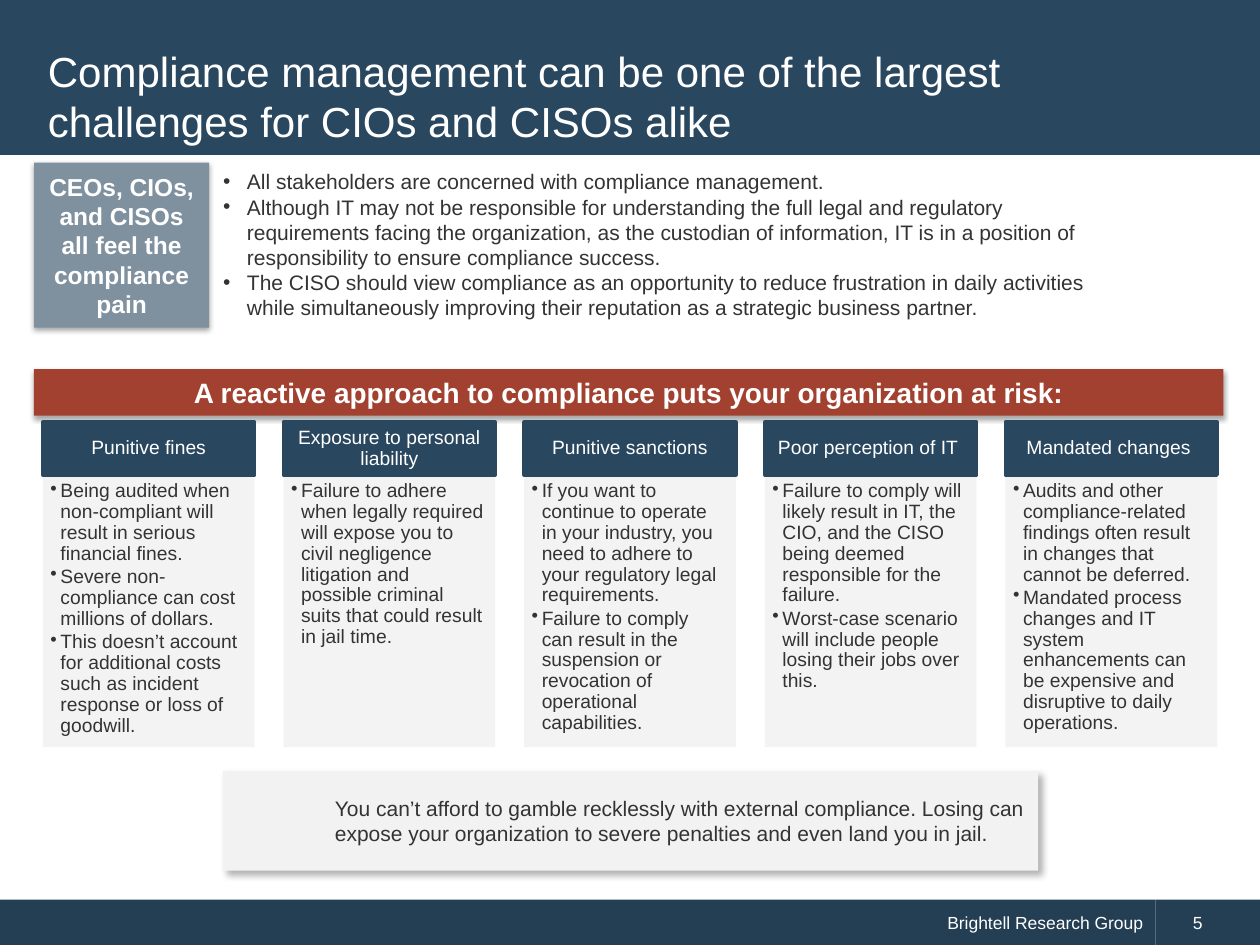
"""Build the compliance risk slide."""
from dataclasses import dataclass

from lxml.etree import SubElement
from pptx import Presentation
from pptx.dml.color import RGBColor
from pptx.enum.shapes import MSO_SHAPE as Shape
from pptx.enum.text import MSO_ANCHOR as Anchor, MSO_AUTO_SIZE as AutoSize, PP_ALIGN as Align
from pptx.oxml.ns import qn
from pptx.util import Inches, Pt

NAVY, DARK, RED, SLATE = "29475F", "243F54", "A24130", "7F919F"
LIGHT, TEXT, WHITE = "F2F2F2", "333333", "FFFFFF"


@dataclass
class Style:
    size: float
    color: str = WHITE
    bold: bool = False
    align: Align = Align.LEFT
    anchor: Anchor = Anchor.MIDDLE
    margin: float = 0
    hanging: float = 0
    spacing: float = 1
    after: float = 0
    insets: tuple = (0.1, 0.05, 0.1, 0.05)


@dataclass
class Column:
    heading: str
    points: list


@dataclass
class Shadow:
    blur: float
    dist: float
    angle: int
    alpha: int


SOFT = Shadow(3, 1.5, 90, 35)
DIAGONAL = Shadow(4, 3, 45, 30)
HEADING = Style(11, align=Align.CENTER, spacing=0.9, insets=(0.09, 0.05, 0.09, 0.05))
POINTS = Style(11, TEXT, anchor=Anchor.TOP, margin=0.08, hanging=0.08,
               spacing=0.9, after=1.6, insets=(0.06, 0.06, 0.09, 0.1))
COLUMNS = [
    Column("Punitive fines", [
        "Being audited when non-compliant will result in serious financial fines.",
        "Severe non-compliance can cost millions of dollars.",
        "This doesn’t account for additional costs such as incident response or loss of goodwill."]),
    Column("Exposure to personal liability", [
        "Failure to adhere when legally required will expose you to civil negligence litigation "
        "and possible criminal suits that could result in jail time."]),
    Column("Punitive sanctions", [
        "If you want to continue to operate in your industry, you need to adhere to your "
        "regulatory legal requirements.",
        "Failure to comply can result in the suspension or revocation of operational capabilities."]),
    Column("Poor perception of IT ", [
        "Failure to comply will likely result in IT, the CIO, and the CISO being deemed "
        "responsible for the failure.",
        "Worst-case scenario will include people losing their jobs over this."]),
    Column("Mandated changes ", [
        "Audits and other compliance-related findings often result in changes that cannot be deferred.",
        "Mandated process changes and IT system enhancements can be expensive and disruptive "
        "to daily operations."]),
]
CONCERNS = [
    "All stakeholders are concerned with compliance management.",
    "Although IT may not be responsible for understanding the full legal and regulatory "
    "requirements facing the organization, as the custodian of information, IT is in a "
    "position of responsibility to ensure compliance success.",
    "The CISO should view compliance as an opportunity to reduce frustration in daily "
    "activities while simultaneously improving their reputation as a strategic business partner.",
]


def rgb(color: str) -> RGBColor:
    return RGBColor.from_string(color)


def write(sp, lines: list, style: Style) -> None:
    tf = sp.text_frame
    tf.text = "\n".join(lines)
    tf.word_wrap = True
    tf.auto_size = AutoSize.NONE
    tf.vertical_anchor = style.anchor
    tf.margin_left, tf.margin_top, tf.margin_right, tf.margin_bottom = map(Inches, style.insets)
    for p in tf.paragraphs:
        p.alignment = style.align
        p.line_spacing = style.spacing
        p.space_before, p.space_after = Pt(0), Pt(style.after)
        pPr = p._p.get_or_add_pPr()
        pPr.set("marL", str(Inches(style.margin)))
        pPr.set("indent", str(-Inches(style.hanging)))
        if style.hanging:
            SubElement(pPr, qn("a:buChar"), char="•")
        for r in p.runs:
            r.font.name, r.font.size, r.font.bold = "Arial", Pt(style.size), style.bold
            r.font.color.rgb = rgb(style.color)


def place(sp, left: float, top: float, width: float, height: float) -> None:
    sp.left, sp.top, sp.width, sp.height = map(Inches, (left, top, width, height))


def add_box(s, at: tuple, fill: str, lines=None, style=None, shadow=None):
    sp = s.shapes.add_shape(Shape.RECTANGLE, *map(Inches, at))
    sp.fill.solid()
    sp.fill.fore_color.rgb = rgb(fill)
    sp.line.fill.background()
    sp.shadow.inherit = False
    if shadow:
        outer = SubElement(sp._element.spPr.find(qn("a:effectLst")), qn("a:outerShdw"),
                           blurRad=str(Pt(shadow.blur)), dist=str(Pt(shadow.dist)),
                           dir=str(shadow.angle * 60000), rotWithShape="0")
        black = SubElement(outer, qn("a:srgbClr"), val="000000")
        SubElement(black, qn("a:alpha"), val=str(shadow.alpha * 1000))
    if lines:
        write(sp, lines, style)
    return sp


def add_column(s, left: float, column: Column) -> None:
    panel = add_box(s, (left, 3.76, 1.68, 2.17), LIGHT, column.points, POINTS)
    color = panel._element.spPr.find(qn("a:solidFill"))[0]
    SubElement(color, qn("a:alpha"), val="90000")
    head = add_box(s, (left, 3.35, 1.68, 0.42), NAVY, [column.heading], HEADING)
    head.line.color.rgb = rgb(NAVY)
    head.line.width = Pt(2)


def main() -> None:
    prs = Presentation()
    prs.slide_width, prs.slide_height = Inches(10), Inches(7.5)
    s = prs.slides.add_slide(prs.slide_layouts[1])

    band = add_box(s, (0, 0, 10, 1.23), NAVY)
    s.shapes._spTree.insert(2, band._element)
    title, body = s.placeholders
    place(title, 0.28, 0.28, 9.43, 0.96)
    write(title, ["Compliance management can be one of the largest challenges "
                  "for CIOs and CISOs alike"], Style(24))
    place(body, 1.67, 1.29, 7.09, 1.31)
    write(body, CONCERNS, Style(12, TEXT, anchor=Anchor.TOP, margin=0.19, hanging=0.19))

    add_box(s, (0.27, 1.29, 1.39, 1.31), SLATE,
            ["CEOs, CIOs, and CISOs all feel the compliance pain"],
            Style(14, bold=True, align=Align.CENTER), SOFT)
    add_box(s, (0.27, 2.93, 9.44, 0.37), RED,
            ["A reactive approach to compliance puts your organization at risk:"],
            Style(16, bold=True, align=Align.CENTER), SOFT)
    for i, column in enumerate(COLUMNS):
        add_column(s, 0.34 + 1.91 * i, column)
    add_box(s, (1.77, 6.12, 6.47, 0.79), LIGHT,
            ["You can’t afford to gamble recklessly with external compliance. Losing can expose "
             "your organization to severe penalties and even land you in jail."],
            Style(12, TEXT, margin=0.79), DIAGONAL)

    add_box(s, (0, 7.14, 9.17, 0.37), DARK, ["Brightell Research Group"],
            Style(10, align=Align.RIGHT, margin=0.29))
    add_box(s, (9.17, 7.14, 0.83, 0.37), DARK, ["5"], Style(10, margin=0.2))
    prs.save("out.pptx")


if __name__ == "__main__":
    main()
